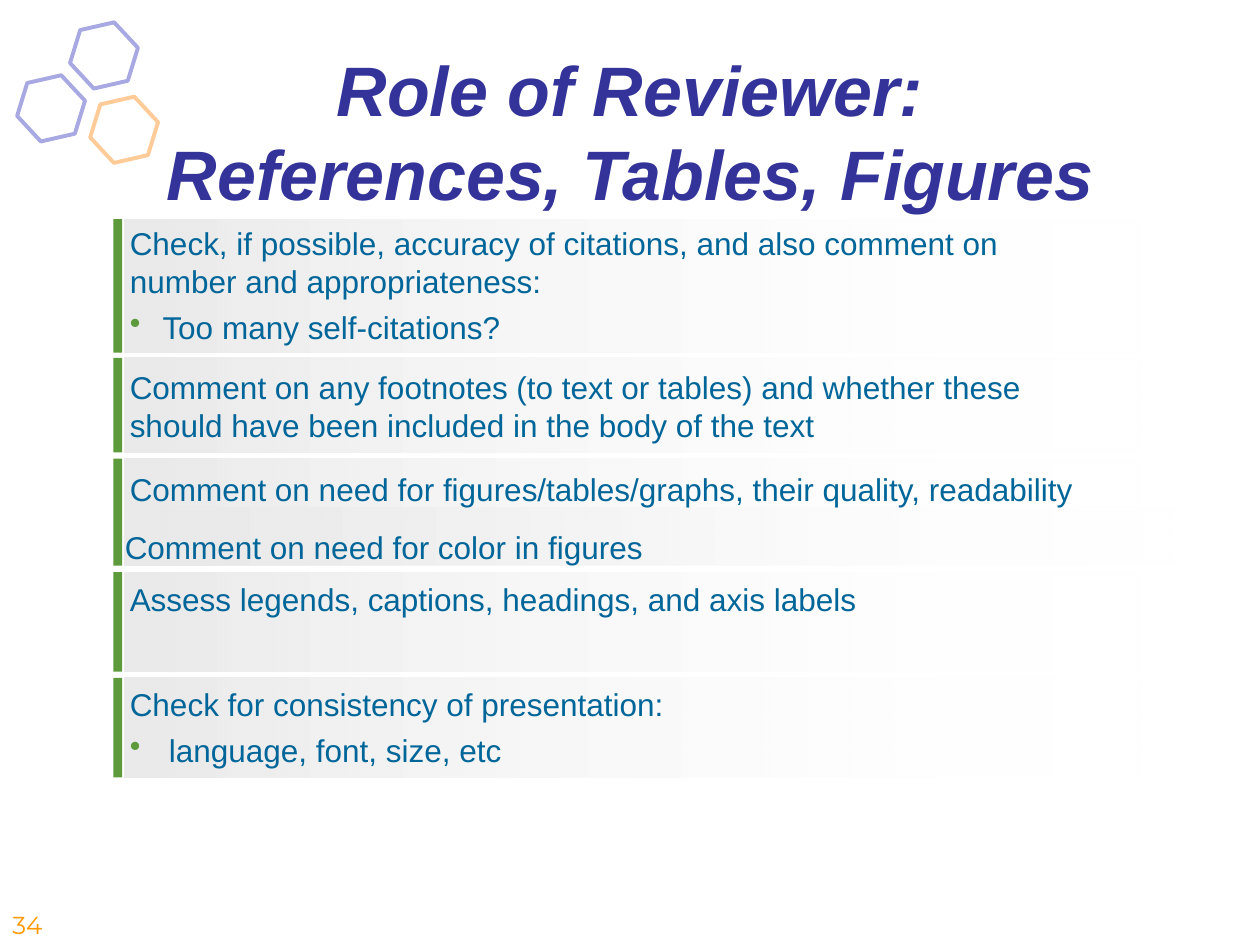
from dataclasses import dataclass

import lxml.etree
import pptx
import pptx.dml.color
import pptx.enum.shapes
import pptx.enum.text
import pptx.oxml
import pptx.oxml.ns
import pptx.util

Inches = pptx.util.Inches
Pt = pptx.util.Pt
Shapes = pptx.enum.shapes.MSO_SHAPE

GREEN = "5D9A3C"
TEXT_BLUE = "006699"
STRIP_LEFT, STRIP_WIDTH = 0.99, 8.1


@dataclass
class Hexagon:
    left: float
    top: float
    color: str


@dataclass
class Row:
    top: float
    height: float
    text_top: float
    text_height: float
    text: str
    bullet: str = ""
    indent: float = 0.0


HEXAGONS = [
    Hexagon(0.55, 0.2, "A8A8E2"),
    Hexagon(0.13, 0.62, "A8A8E2"),
    Hexagon(0.71, 0.79, "FFCC99"),
]

ROWS = [
    Row(1.74, 1.06, 1.78, 0.98,
        "Check, if possible, accuracy of citations, and also comment on "
        "number and appropriateness:",
        "Too many self-citations?", 0.26),
    Row(2.84, 0.75, 2.92, 0.61,
        "Comment on any footnotes (to text or tables) and whether these "
        "should have been included in the body of the text"),
    Row(3.64, 0.85, 3.73, 0.3,
        "Comment on need for figures/tables/graphs, their quality, readability"),
    Row(4.54, 0.79, 4.6, 0.3,
        "Assess legends, captions, headings, and axis labels"),
    Row(5.38, 0.79, 5.44, 0.68,
        "Check for consistency of presentation:",
        "language, font, size, etc", 0.31),
]


def rgb(color: str):
    return pptx.dml.color.RGBColor.from_string(color)


def add_span(para, text: str, size: float, color: str, font: str = "Arial"):
    span = para.add_run()
    span.text = text
    span.font.name = font
    span.font.size = Pt(size)
    span.font.color.rgb = rgb(color)
    return span


def add_preset(page, kind, left: float, top: float, width: float, height: float):
    shape = page.shapes.add_shape(
        kind, Inches(left), Inches(top), Inches(width), Inches(height))
    shape.shadow.inherit = False
    return shape


def add_hexagon(page, item: Hexagon) -> None:
    shape = add_preset(page, Shapes.HEXAGON, item.left, item.top, 0.55, 0.48)
    shape.rotation = 107.1
    shape.adjustments[0] = 0.288
    shape.fill.background()
    shape.line.color.rgb = rgb(item.color)
    shape.line.width = Pt(2.25)


def add_bar(page, top: float, height: float) -> None:
    bar = add_preset(page, Shapes.RECTANGLE, 0.9, top, 0.07, height)
    bar.fill.solid()
    bar.fill.fore_color.rgb = rgb(GREEN)
    bar.line.fill.background()


def add_strip(page, left: float, top: float, height: float) -> None:
    """Add a grey band that fades to transparent on the right."""
    strip = add_preset(page, Shapes.RECTANGLE, left, top, STRIP_WIDTH, height)
    strip.fill.gradient()
    strip.fill.gradient_angle = 0
    for stop, color in zip(strip.fill.gradient_stops, ("EAEAEA", "FFFFFF")):
        stop.color.rgb = rgb(color)
    qn = pptx.oxml.ns.qn
    last_color = strip.element.spPr.findall(".//" + qn("a:srgbClr"))[-1]
    lxml.etree.SubElement(last_color, qn("a:alpha"), val="0")
    strip.line.fill.background()


def add_bullet(para, indent: float) -> None:
    qn = pptx.oxml.ns.qn
    properties = para._p.get_or_add_pPr()
    properties.set("marL", str(Inches(indent)))
    properties.set("indent", str(-Inches(indent)))
    bullet_color = lxml.etree.SubElement(properties, qn("a:buClr"))
    lxml.etree.SubElement(bullet_color, qn("a:srgbClr"), val=GREEN)
    lxml.etree.SubElement(properties, qn("a:buChar"), char="•")


def add_text(page, left: float, top: float, height: float, text: str,
             bullet: str = "", indent: float = 0.0) -> None:
    box = page.shapes.add_textbox(
        Inches(left), Inches(top), Inches(7.79), Inches(height))
    frame = box.text_frame
    frame.word_wrap = True
    frame.margin_left = frame.margin_right = 0
    frame.margin_top = frame.margin_bottom = 0
    add_span(frame.paragraphs[0], text, 18, TEXT_BLUE)
    if bullet:
        para = frame.add_paragraph()
        add_bullet(para, indent)
        para.space_before = Pt(4.5)
        add_span(para, bullet, 18, TEXT_BLUE)


def set_title(page, lines: list[str]) -> None:
    title = page.shapes.title
    title.left, title.top = Inches(0.5), Inches(0.6)
    title.width, title.height = Inches(9), Inches(0.87)
    frame = title.text_frame
    frame.word_wrap = True
    frame.auto_size = pptx.enum.text.MSO_AUTO_SIZE.NONE
    frame.vertical_anchor = pptx.enum.text.MSO_ANCHOR.MIDDLE
    para = frame.paragraphs[0]
    para.alignment = pptx.enum.text.PP_ALIGN.CENTER
    for index, line in enumerate(lines):
        if index:
            para.add_line_break()
        span = add_span(para, line, 40, "333399")
        span.font.bold = True
        span.font.italic = True


def add_page_number(page, number: str) -> None:
    box = page.shapes.add_textbox(
        Inches(0), Inches(7.17), Inches(0.67), Inches(0.33))
    box.text_frame.word_wrap = True
    add_span(box.text_frame.paragraphs[0], number, 14, "FF9900", "Montserrat")


def main() -> None:
    deck = pptx.Presentation()
    deck.slide_width, deck.slide_height = Inches(10), Inches(7.5)
    page = deck.slides.add_slide(deck.slide_layouts.get_by_name("Title Only"))

    for hexagon in HEXAGONS:
        add_hexagon(page, hexagon)
    set_title(page, ["Role of Reviewer:", "References, Tables, Figures"])
    add_page_number(page, "34")

    # Every band goes behind all of the text.
    for row in ROWS:
        add_bar(page, row.top, row.height)
        add_strip(page, STRIP_LEFT, row.top, row.height)
    add_strip(page, 1.25, 4.03, 0.45)

    for row in ROWS:
        add_text(page, 1.03, row.text_top, row.text_height,
                 row.text, row.bullet, row.indent)
    add_text(page, STRIP_LEFT, 4.19, 0.3, "Comment on need for color in figures")

    deck.save("out.pptx")


if __name__ == "__main__":
    main()
